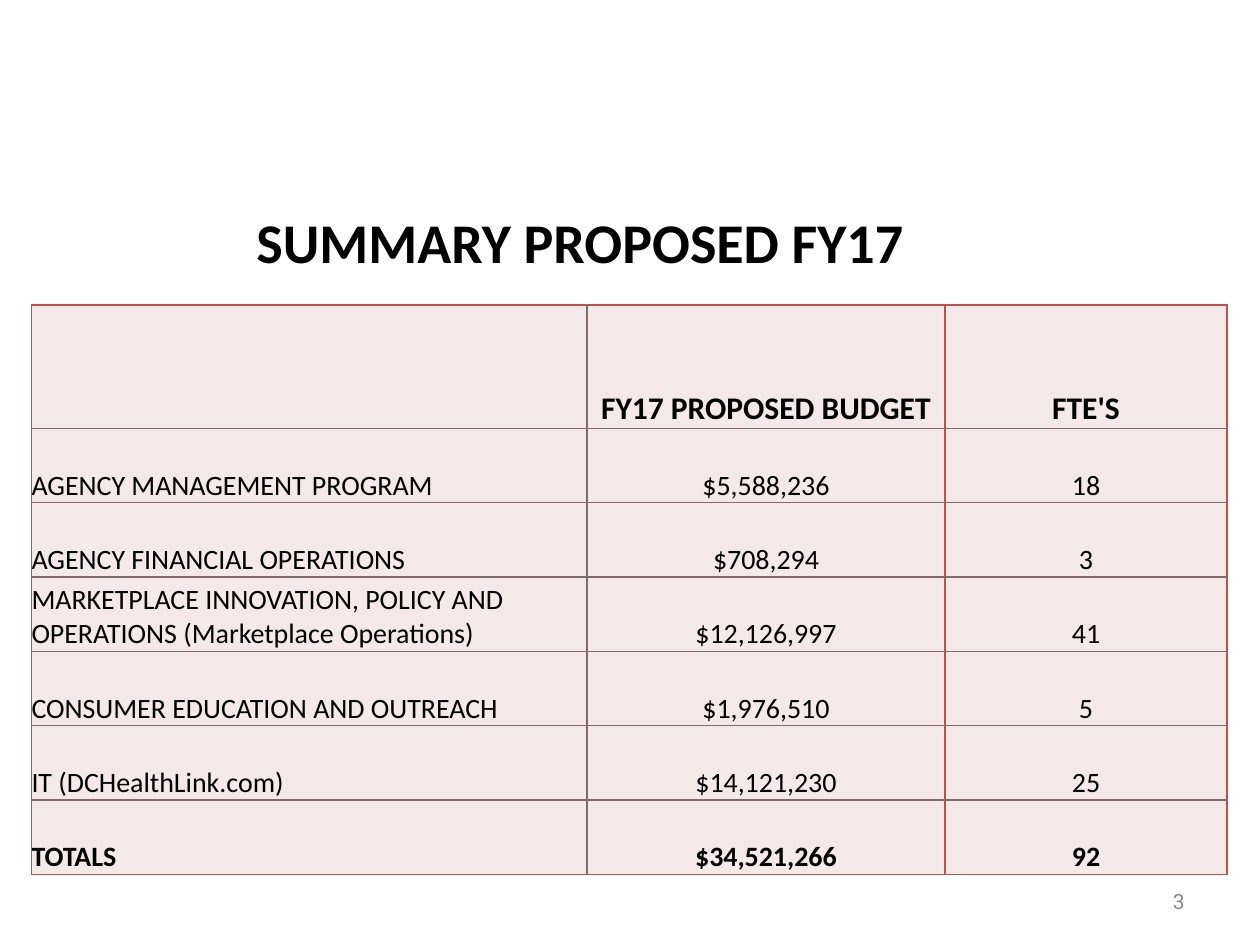
import dataclasses
import lxml.etree
import pptx
import pptx.dml.color
import pptx.enum.text
import pptx.oxml.ns
import pptx.util

Inches = pptx.util.Inches
Align = pptx.enum.text.PP_ALIGN
Anchor = pptx.enum.text.MSO_ANCHOR


@dataclasses.dataclass(frozen=True)
class Theme:
    font: str = "Calibri"
    num_font: str = "Roboto"
    ink: str = "000000"
    pale: str = "8C8C8C"
    fill: str = "F4E9E9"
    red: str = "C0504D"
    gray: str = "7F6B6B"
    title: int = 32
    head: int = 18
    body: int = 16
    small: int = 12


class Deck:
    """Holds the style and the current slide."""

    def __init__(self, theme):
        self.theme = theme
        self.file = pptx.Presentation()
        self.file.slide_width = Inches(10)
        self.file.slide_height = Inches(7.5)
        self.slide = self.file.slides.add_slide(self.file.slide_layouts[5])

    def words(self, frame, text, size, align, bold=False, font=None, color=None):
        par = frame.paragraphs[0]
        par.alignment = align
        run = par.add_run()
        run.text = text
        run.font.name = font or self.theme.font
        run.font.size = pptx.util.Pt(size)
        run.font.bold = bold
        run.font.color.rgb = pptx.dml.color.RGBColor.from_string(color or self.theme.ink)

    def title(self, text, box):
        shape = self.slide.shapes.title
        shape.left, shape.top, shape.width, shape.height = map(Inches, box)
        frame = shape.text_frame
        frame.word_wrap = False
        frame.auto_size = pptx.enum.text.MSO_AUTO_SIZE.SHAPE_TO_FIT_TEXT
        frame.vertical_anchor = Anchor.TOP
        self.words(frame, text, self.theme.title, Align.CENTER, True)

    def number(self, text, box):
        frame = self.slide.shapes.add_textbox(*map(Inches, box)).text_frame
        frame.word_wrap = True
        frame.vertical_anchor = Anchor.MIDDLE
        self.words(frame, text, self.theme.small, Align.RIGHT,
                   font=self.theme.num_font, color=self.theme.pale)

    def edge(self, cell, side, color):
        name = pptx.oxml.ns.qn
        line = lxml.etree.SubElement(cell._tc.get_or_add_tcPr(), name(f"a:ln{side}"), w="12700")
        solid = lxml.etree.SubElement(line, name("a:solidFill"))
        lxml.etree.SubElement(solid, name("a:srgbClr"), val=color)

    def table(self, rows, box, widths, heights):
        frame = self.slide.shapes.add_table(len(rows), len(widths), *map(Inches, box))
        grid = frame.table
        grid.first_row = grid.horz_banding = False
        for col, width in zip(grid.columns, widths):
            col.width = Inches(width)
        for row, height in zip(grid.rows, heights):
            row.height = Inches(height)
        last = len(rows) - 1
        for r, row in enumerate(rows):
            for c, text in enumerate(row):
                self.cell(grid.cell(r, c), text, r, c, last)

    def cell(self, cell, text, r, c, last):
        look = self.theme
        # Red frame and last column rule, gray lines elsewhere
        reds = {"L": c == 2, "R": c >= 1, "T": r == 0, "B": r == last}
        for side, red in reds.items():
            self.edge(cell, side, look.red if red else look.gray)
        cell.fill.solid()
        cell.fill.fore_color.rgb = pptx.dml.color.RGBColor.from_string(look.fill)
        cell.margin_left = cell.margin_right = cell.margin_top = cell.margin_bottom = 0
        cell.vertical_anchor = Anchor.BOTTOM
        if text:
            self.words(cell.text_frame, text, look.body if r else look.head,
                       Align.CENTER if c else Align.LEFT, r in (0, last))


ROWS = [
    ("", "FY17 PROPOSED BUDGET", "FTE'S"),
    ("AGENCY MANAGEMENT PROGRAM", "$5,588,236", "18"),
    ("AGENCY FINANCIAL OPERATIONS", "$708,294", "3"),
    ("MARKETPLACE INNOVATION, POLICY AND OPERATIONS (Marketplace Operations)",
     "$12,126,997", "41"),
    ("CONSUMER EDUCATION AND OUTREACH", "$1,976,510", "5"),
    ("IT (DCHealthLink.com)", "$14,121,230", "25"),
    ("TOTALS", "$34,521,266", "92"),
]


def main():
    deck = Deck(Theme())
    # Page number
    deck.number("3", (7.17, 6.95, 2.33, 0.4))
    # Heading
    deck.title("SUMMARY PROPOSED FY17 ", (1.91, 1.6, 5.49, 0.64))
    # Budget table
    deck.table(ROWS, (0.25, 2.42, 9.5, 4.5), (4.41, 2.84, 2.24),
               [0.98] + [0.59] * (len(ROWS) - 1))
    deck.file.save("out.pptx")


if __name__ == "__main__":
    main()
